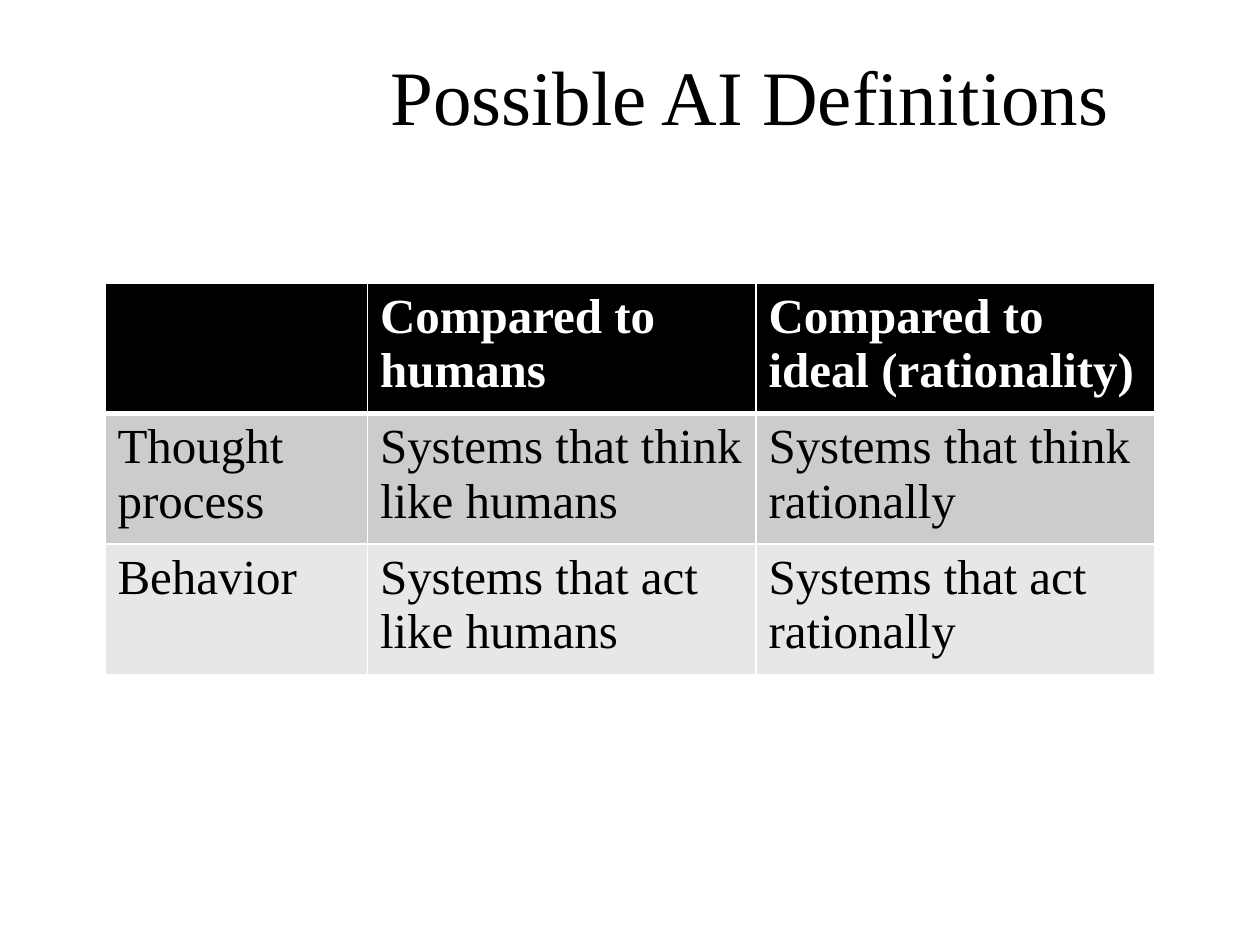
"""Build a slide that sets out possible AI definitions in a table."""
from dataclasses import dataclass

from lxml import etree
from pptx import Presentation
from pptx.dml.color import RGBColor
from pptx.enum import text
from pptx.oxml import ns
from pptx.util import Pt

BLACK = RGBColor(0x00, 0x00, 0x00)
WHITE = RGBColor(0xFF, 0xFF, 0xFF)
MID_GREY = RGBColor(0xCC, 0xCC, 0xCC)
PALE_GREY = RGBColor(0xE7, 0xE7, 0xE7)
FONT = "Times New Roman"
COLUMN_WIDTHS = (150, 222, 228)
ROW_HEIGHT = 69


@dataclass(frozen=True)
class Row:
    cells: tuple[str, ...]
    fill: RGBColor
    color: RGBColor = BLACK
    bold: bool = False
    top: float = 1
    bottom: float = 1


ROWS = (
    Row(("", "Compared to humans", "Compared to ideal (rationality)"),
        BLACK, WHITE, bold=True, bottom=3),
    Row(("Thought process", "Systems that think like humans", "Systems that think rationally"),
        MID_GREY, top=3),
    Row(("Behavior", "Systems that act like humans", "Systems that act rationally"),
        PALE_GREY),
)


def write(tf, content: str, size: float, color: RGBColor, bold: bool = False) -> None:
    p = tf.paragraphs[0]
    p.alignment = text.PP_ALIGN.LEFT
    font = p.font
    if content:
        r = p.add_run()
        r.text = content
        font = r.font
    for name, value in {"name": FONT, "size": Pt(size), "bold": bold}.items():
        setattr(font, name, value)
    font.color.rgb = color


def set_borders(cell, row: Row) -> None:
    tc_pr = cell._tc.get_or_add_tcPr()
    widths = {"lnL": 1, "lnR": 1, "lnT": row.top, "lnB": row.bottom}
    for i, (tag, width) in enumerate(widths.items()):
        ln = etree.Element(ns.qn(f"a:{tag}"), w=str(Pt(width)))
        fill = etree.SubElement(ln, ns.qn("a:solidFill"))
        etree.SubElement(fill, ns.qn("a:srgbClr"), val=str(WHITE))
        tc_pr.insert(i, ln)


def add_title(s, content: str) -> None:
    sp = s.shapes.add_textbox(Pt(216), Pt(30), Pt(492), Pt(54))
    tf = sp.text_frame
    tf.word_wrap = True
    tf.vertical_anchor = text.MSO_ANCHOR.BOTTOM
    write(tf, content, 44, BLACK)


def add_definitions(s, rows: tuple[Row, ...]) -> None:
    table = s.shapes.add_table(
        len(rows), len(COLUMN_WIDTHS), Pt(60), Pt(162),
        Pt(sum(COLUMN_WIDTHS)), Pt(ROW_HEIGHT * len(rows))).table
    for column, width in zip(table.columns, COLUMN_WIDTHS):
        column.width = Pt(width)
    for line, row in zip(table.rows, rows):
        line.height = Pt(ROW_HEIGHT)
        for cell, content in zip(line.cells, row.cells):
            cell.fill.solid()
            cell.fill.fore_color.rgb = row.fill
            set_borders(cell, row)
            write(cell.text_frame, content, 28, row.color, row.bold)


def main() -> None:
    prs = Presentation()
    prs.slide_width, prs.slide_height = Pt(720), Pt(540)
    s = prs.slides.add_slide(prs.slide_layouts[6])
    add_title(s, "Possible AI Definitions")
    add_definitions(s, ROWS)
    prs.save("out.pptx")


if __name__ == "__main__":
    main()
